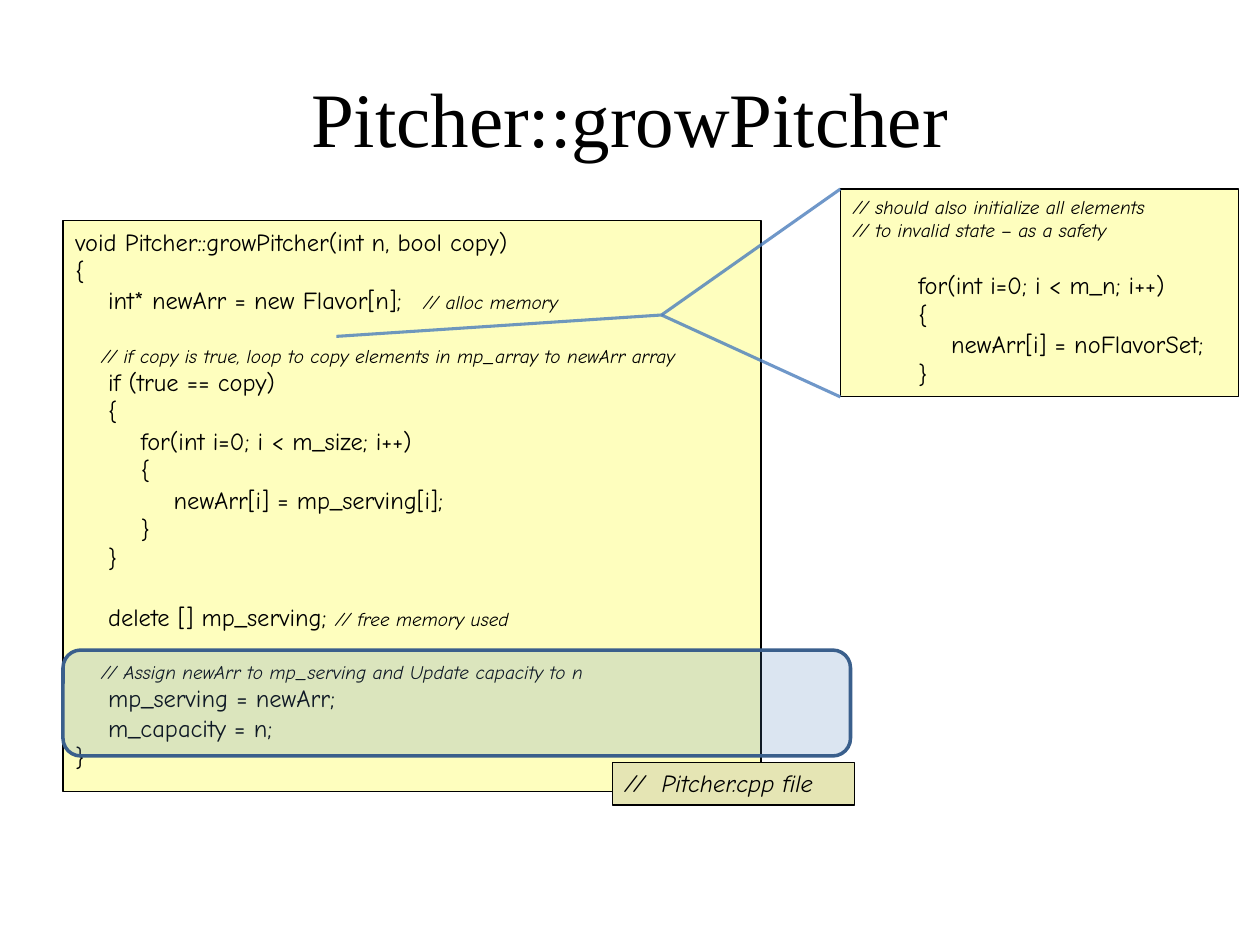
from lxml import etree
from pptx import Presentation
from pptx.dml.color import RGBColor
from pptx.enum.shapes import MSO_CONNECTOR, MSO_SHAPE
from pptx.enum.text import MSO_ANCHOR, PP_ALIGN
from pptx.oxml.ns import qn
from pptx.util import Inches, Pt

RECT, ROUND = MSO_SHAPE.RECTANGLE, MSO_SHAPE.ROUNDED_RECTANGLE
LINE = MSO_CONNECTOR.STRAIGHT
LEFT, CENTER = PP_ALIGN.LEFT, PP_ALIGN.CENTER
TOP, MIDDLE = MSO_ANCHOR.TOP, MSO_ANCHOR.MIDDLE

COLORS = {
    "ink": "000000", "paper": "FEFEBE", "tag": "E5E5B4",
    "glow": "4F81BD", "edge": "3A5F8C", "wire": "4B7EBC",
}
CODE, NOTE = 14, 11  # text sizes in points
STEP = 0.26          # one code indent, in inches
NOTE_TAB = 2.92      # where a comment after code starts, in inches
GAP = 16.5           # height of an empty code row, in points

# Each row: indent level, code, comment, gap above
GROW = [
    (0, "void Pitcher::growPitcher(int n, bool copy)", "", 0),
    (0, "{", "", 0),
    (1, "int* newArr = new Flavor[n];\t", "// alloc memory", 0),
    (1, "", "// if copy is true, loop to copy elements in mp_array to newArr array", GAP),
    (1, "if (true == copy)", "", 0),
    (1, "{", "", 0),
    (2, "for(int i=0; i < m_size; i++)", "", 0),
    (2, "{", "", 0),
    (3, "newArr[i] = mp_serving[i];", "", 0),
    (2, "}", "", 0),
    (1, "}", "", 0),
    (1, "delete [] mp_serving; ", "// free memory used", GAP),
    (1, "", "// Assign newArr to mp_serving and Update capacity to n", GAP),
    (1, "mp_serving = newArr;", "", 0),
    (1, "m_capacity = n;", "", 0),
    (0, "}", "", 0),
]
SAFETY = [
    (0, "", "// should also initialize all elements", 0),
    (0, "", "// to invalid state – as a safety", 0),
    (2, "for(int i=0; i < m_n; i++)", "", GAP),
    (2, "{", "", 0),
    (3, "newArr[i] = noFlavorSet;", "", 0),
    (2, "}", "", 0),
]


def rgb(name):
    return RGBColor.from_string(COLORS[name])


def fade(fill, percent):
    """Make a solid fill partly transparent."""
    tint = fill._xPr.find(qn("a:solidFill"))[0]
    etree.SubElement(tint, qn("a:alpha"), val=str(percent * 1000))


def write(para, text, size=CODE, font="Comic Neue", italic=False, align=LEFT):
    para.alignment = align
    run = para.add_run()
    run.text = text
    run.font.size = Pt(size)
    run.font.name = font
    run.font.italic = italic
    run.font.color.rgb = rgb("ink")


def indent(para, inches):
    """Indent a row and set the tab stop, counted from that indent."""
    props = para._p.get_or_add_pPr()
    props.set("marL", str(Inches(inches)))
    props.set("indent", "0")
    tabs = etree.SubElement(props, qn("a:tabLst"))
    etree.SubElement(tabs, qn("a:tab"), pos=str(Inches(NOTE_TAB - inches)), algn="l")


def box(shapes, kind, place, fill, line="ink", width=0.75):
    shape = shapes.add_shape(kind, *map(Inches, place))
    shape.shadow.inherit = False
    shape.fill.solid()
    shape.fill.fore_color.rgb = rgb(fill)
    shape.line.color.rgb = rgb(line)
    shape.line.width = Pt(width)
    frame = shape.text_frame
    frame.word_wrap = True
    frame.vertical_anchor = TOP
    return shape


def listing(shapes, place, rows):
    frame = box(shapes, RECT, place, "paper").text_frame
    for i, (level, code, note, gap) in enumerate(rows):
        para = frame.add_paragraph() if i else frame.paragraphs[0]
        para.space_before = Pt(gap)
        indent(para, level * STEP * (1 if code else NOTE / CODE))
        if code:
            write(para, code)
        if note:
            write(para, note, size=NOTE, italic=True)


def wire(shapes, start, end):
    link = shapes.add_connector(LINE, *map(Inches, start + end))
    link.line.color.rgb = rgb("wire")
    link.line.width = Pt(1.75)
    fade(link.line.fill, 80)
    etree.SubElement(link._element.spPr, qn("a:effectLst"))


def title(shapes, text):
    area = shapes.add_textbox(*map(Inches, (0.5, 0.3, 9, 1.25)))
    frame = area.text_frame
    frame.word_wrap = True
    frame.vertical_anchor = MIDDLE
    write(frame.paragraphs[0], text, size=44, font="Times New Roman", align=CENTER)


def callout(shapes):
    """Side listing with the wires that tie it to its row."""
    group = shapes.add_group_shape().shapes
    x, y, wide, high = 6.67, 1.5, 3.16, 1.65
    listing(group, (x, y, wide, high), SAFETY)
    hub = (5.25, 2.5)
    for end in ((x, y), (x, y + high)):
        wire(group, hub, end)
    wire(group, (2.67, 2.67), hub)


def main():
    deck = Presentation()
    deck.slide_width, deck.slide_height = Inches(10), Inches(7.5)
    shapes = deck.slides.add_slide(deck.slide_layouts[6]).shapes
    title(shapes, "Pitcher::growPitcher")
    listing(shapes, (0.5, 1.75, 5.54, 4.53), GROW)
    mark = box(shapes, ROUND, (0.5, 5.16, 6.25, 0.84), "glow", "edge", 2)
    fade(mark.fill, 20)
    tag = box(shapes, RECT, (4.86, 6.05, 1.92, 0.34), "tag")
    write(tag.text_frame.paragraphs[0], "//  Pitcher.cpp file", italic=True)
    callout(shapes)
    deck.save("out.pptx")


if __name__ == "__main__":
    main()
